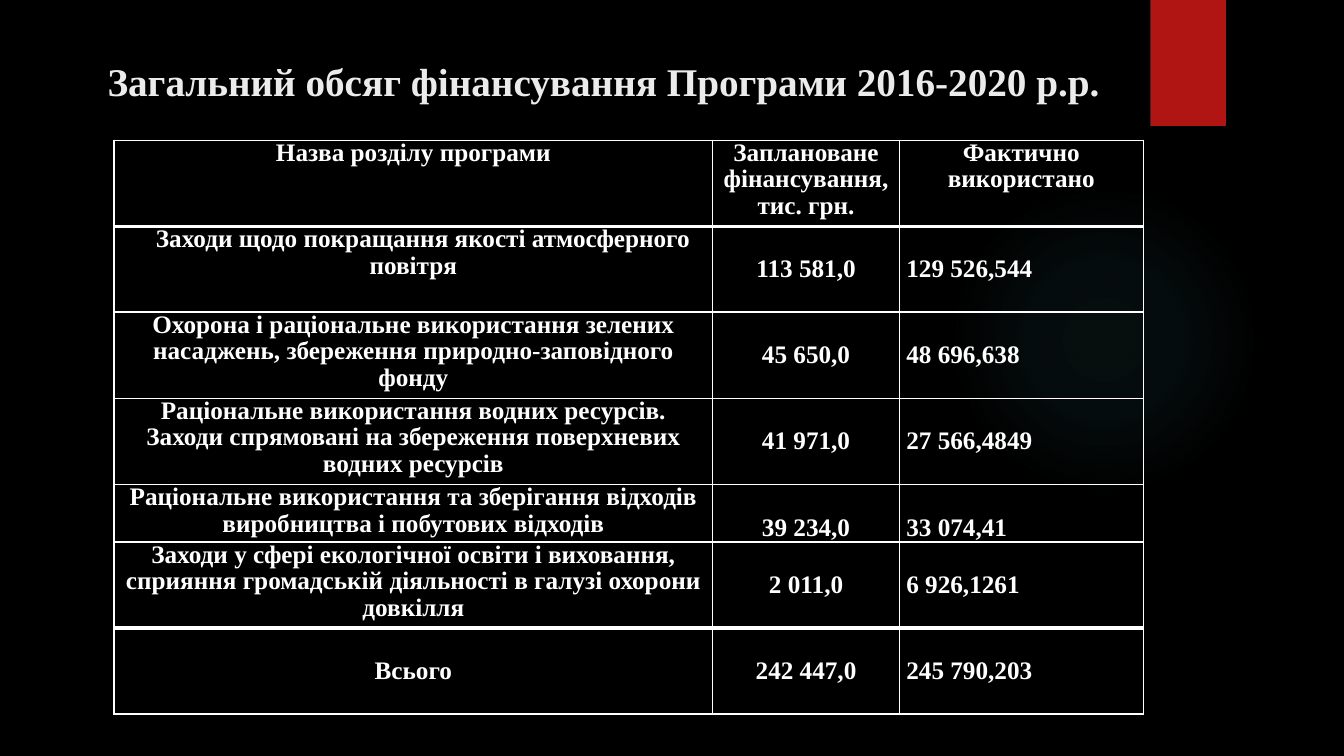
from lxml import etree
from pptx import Presentation
from pptx.dml.color import RGBColor
from pptx.enum.shapes import MSO_SHAPE as Shape
from pptx.enum.text import MSO_ANCHOR as Anchor, PP_ALIGN as Align
from pptx.oxml import parse_xml
from pptx.oxml.ns import nsdecls, qn
from pptx.util import Inches, Pt

COLORS = {"background": "000000", "glow": "50B9C1", "ribbon": "B01513",
          "title": "EBEBEB", "text": "FFFFFF", "border": "FFFFFF"}
TITLE = "Загальний обсяг фінансування Програми 2016-2020 р.р."
ROWS = [
    ("Назва розділу програми", "Заплановане\nфінансування,\nтис. грн.", "Фактично\nвикористано"),
    ("Заходи щодо покращання якості атмосферного повітря", "113 581,0", "129 526,544"),
    ("Охорона і раціональне використання зелених насаджень, збереження природно-заповідного фонду",
     "45 650,0", "48 696,638"),
    ("Раціональне використання водних ресурсів.\n"
     "Заходи спрямовані на збереження поверхневих водних ресурсів", "41 971,0", "27 566,4849"),
    ("Раціональне використання та зберігання відходів виробництва і побутових відходів",
     "39 234,0", "33 074,41"),
    ("Заходи у сфері екологічної освіти і виховання, сприяння громадській діяльності "
     "в галузі охорони довкілля", "2 011,0", "6 926,1261"),
    ("Всього", "242 447,0", "245 790,203"),
]
COLUMN_WIDTHS = [5.94, 1.85, 2.42]
ROW_HEIGHTS = [0.85, 0.85, 0.85, 0.85, 0.57, 0.85, 0.85]
HEADER, FIRST_SECTION, SHORT, TOTAL = 0, 1, 4, len(ROWS) - 1
GLOW_STOPS = [(0, 7), (36, 6), (69, 0)]
MARGINS = {"margin_left": Inches(0.07), "margin_right": Inches(0.07),
           "margin_top": 0, "margin_bottom": 0}
TITLE_FONT = {"name": "Times New Roman", "size": Pt(28), "bold": True}
CELL_FONT = {**TITLE_FONT, "size": Pt(18)}


def set_values(target, values):
    for name, value in values.items():
        setattr(target, name, value)


def format_paragraph(paragraph, font, color, alignment):
    paragraph.alignment = alignment
    for run in paragraph.runs:
        set_values(run.font, font)
        run.font.color.rgb = RGBColor.from_string(COLORS[color])


def add_plain_shape(slide, kind, box, color):
    shape = slide.shapes.add_shape(kind, *map(Inches, box))
    shape.shadow.inherit = False
    shape.fill.solid()
    shape.fill.fore_color.rgb = RGBColor.from_string(COLORS[color])
    shape.line.fill.background()
    return shape


def add_glow(slide):
    shape = add_plain_shape(slide, Shape.OVAL, (9.41, 1.83, 3.08, 3.08), "glow")
    stops = "".join(
        f'<a:gs pos="{position * 1000}"><a:srgbClr val="{COLORS["glow"]}">'
        f'<a:alpha val="{alpha * 1000}"/></a:srgbClr></a:gs>' for position, alpha in GLOW_STOPS)
    gradient = parse_xml(
        f'<a:gradFill {nsdecls("a")}><a:gsLst>{stops}</a:gsLst><a:path path="circle">'
        '<a:fillToRect l="50000" t="50000" r="50000" b="50000"/></a:path></a:gradFill>')
    properties = shape.element.spPr
    properties.replace(properties.find(qn("a:solidFill")), gradient)


def add_borders(cell, top, bottom):
    properties = cell._tc.get_or_add_tcPr()
    for side, width in {"L": 1, "R": 1, "T": top, "B": bottom}.items():
        line = etree.SubElement(properties, qn(f"a:ln{side}"), w=str(Pt(width)))
        fill = etree.SubElement(line, qn("a:solidFill"))
        etree.SubElement(fill, qn("a:srgbClr"), val=COLORS["border"])


def cell_anchor(row, column):
    if row == HEADER or (column == 0 and row != TOTAL):
        return Anchor.TOP
    return Anchor.BOTTOM if row == SHORT else Anchor.MIDDLE


def add_funding_table(slide):
    table = slide.shapes.add_table(
        len(ROWS), len(COLUMN_WIDTHS), Inches(1.13), Inches(1.39),
        Inches(sum(COLUMN_WIDTHS)), Inches(sum(ROW_HEIGHTS))).table
    for column, width in zip(table.columns, COLUMN_WIDTHS):
        column.width = Inches(width)
    for row, height in zip(table.rows, ROW_HEIGHTS):
        row.height = Inches(height)
    for r, texts in enumerate(ROWS):
        for c, text in enumerate(texts):
            cell = table.cell(r, c)
            cell.text = text
            set_values(cell, MARGINS)
            cell.vertical_anchor = cell_anchor(r, c)
            add_borders(cell, 3 if r in (HEADER + 1, TOTAL) else 1,
                        3 if r in (HEADER, TOTAL - 1) else 1)
            cell.fill.background()
            alignment = Align.LEFT if c == 2 and r != HEADER else Align.CENTER
            for paragraph in cell.text_frame.paragraphs:
                paragraph.line_spacing = 0.95
                format_paragraph(paragraph, CELL_FONT, "text", alignment)
    indented = table.cell(FIRST_SECTION, 0).text_frame.paragraphs[0]
    indented._p.get_or_add_pPr().set("indent", str(Inches(0.19)))


def main():
    presentation = Presentation()
    presentation.slide_width, presentation.slide_height = Inches(13.33), Inches(7.5)
    slide = presentation.slides.add_slide(presentation.slide_layouts[6])
    slide.background.fill.solid()
    slide.background.fill.fore_color.rgb = RGBColor.from_string(COLORS["background"])
    add_glow(slide)
    add_plain_shape(slide, Shape.RECTANGLE, (11.41, 0, 0.75, 1.25), "ribbon")
    title = slide.shapes.add_textbox(*map(Inches, (0.71, 0.5, 10.55, 0.6))).text_frame
    title.text = TITLE
    title.word_wrap = True
    title.vertical_anchor = Anchor.MIDDLE
    format_paragraph(title.paragraphs[0], TITLE_FONT, "title", Align.CENTER)
    add_funding_table(slide)
    presentation.save("out.pptx")


if __name__ == "__main__":
    main()
